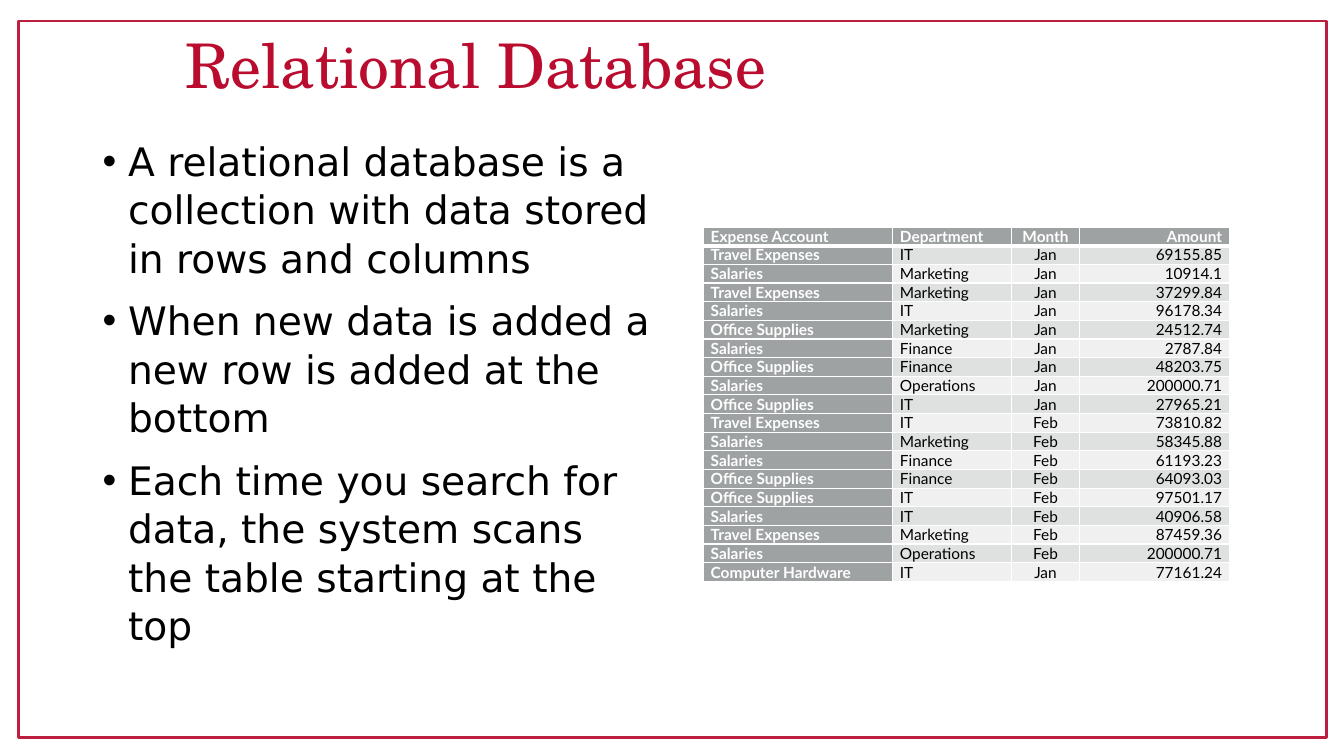
"""Build the Relational Database slide with its bullets and expense table."""
from dataclasses import dataclass

from lxml import etree
from pptx import Presentation
from pptx import util as u
from pptx.dml.color import RGBColor
from pptx.enum import shapes, text
from pptx.oxml.ns import qn

COLORS = {
    "frame": "BC1E3E", "title": "BA0C2F", "ink": "000000", "white": "FFFFFF",
    "header": "9EA2A2", "odd_row": "DFE0E0", "even_row": "F0F0F0",
}


@dataclass(frozen=True)
class TextStyle:
    font: str
    size: int
    color: str
    bold: bool = False


@dataclass(frozen=True)
class Column:
    heading: str
    width: float
    align: text.PP_ALIGN


@dataclass(frozen=True)
class Expense:
    account: str
    department: str
    month: str
    amount: str


TITLE = TextStyle("TeX Gyre Schola", 44, "title")
BODY = TextStyle("DejaVu Sans", 28, "ink")
HEADING = TextStyle("Lato", 11, "white", True)
VALUE = TextStyle("Lato", 11, "ink")

POINTS = [
    "A relational database is a collection with data stored in rows and columns",
    "When new data is added a new row is added at the bottom",
    "Each time you search for data, the system scans the table starting at the top",
]
COLUMNS = [
    Column("Expense Account", 4.77, text.PP_ALIGN.LEFT),
    Column("Department", 3.0, text.PP_ALIGN.LEFT),
    Column("Month", 1.7, text.PP_ALIGN.CENTER),
    Column("Amount", 3.78, text.PP_ALIGN.RIGHT),
]
EXPENSES = [
    Expense("Travel Expenses", "IT", "Jan", "69155.85"),
    Expense("Salaries", "Marketing", "Jan", "10914.1"),
    Expense("Travel Expenses", "Marketing", "Jan", "37299.84"),
    Expense("Salaries", "IT", "Jan", "96178.34"),
    Expense("Office Supplies", "Marketing", "Jan", "24512.74"),
    Expense("Salaries", "Finance", "Jan", "2787.84"),
    Expense("Office Supplies", "Finance", "Jan", "48203.75"),
    Expense("Salaries", "Operations", "Jan", "200000.71"),
    Expense("Office Supplies", "IT", "Jan", "27965.21"),
    Expense("Travel Expenses", "IT", "Feb", "73810.82"),
    Expense("Salaries", "Marketing", "Feb", "58345.88"),
    Expense("Salaries", "Finance", "Feb", "61193.23"),
    Expense("Office Supplies", "Finance", "Feb", "64093.03"),
    Expense("Office Supplies", "IT", "Feb", "97501.17"),
    Expense("Salaries", "IT", "Feb", "40906.58"),
    Expense("Travel Expenses", "Marketing", "Feb", "87459.36"),
    Expense("Salaries", "Operations", "Feb", "200000.71"),
    Expense("Computer Hardware", "IT", "Jan", "77161.24"),
]
ROW_HEIGHT = 0.47


def rgb(name: str) -> RGBColor:
    return RGBColor.from_string(COLORS[name])


def style_runs(paragraph, style: TextStyle) -> None:
    for run in paragraph.runs:
        run.font.name = style.font
        run.font.size = u.Pt(style.size)
        run.font.bold = style.bold
        run.font.color.rgb = rgb(style.color)


def add_frame(slide) -> None:
    frame = slide.shapes.add_shape(
        shapes.MSO_SHAPE.RECTANGLE, u.Cm(0.46), u.Cm(0.53), u.Cm(32.97), u.Cm(18.06))
    frame.shadow.inherit = False
    frame.fill.background()
    frame.line.color.rgb = rgb("frame")
    frame.line.width = u.Pt(2)


def add_title(slide) -> None:
    title = slide.shapes.add_textbox(u.Cm(4.42), u.Cm(0.58), u.Cm(28.7), u.Cm(2.29)).text_frame
    title.word_wrap = True
    title.vertical_anchor = text.MSO_ANCHOR.MIDDLE
    title.text = "Relational Database"
    title.paragraphs[0].line_spacing = 0.9
    style_runs(title.paragraphs[0], TITLE)


def add_points(slide) -> None:
    body = slide.shapes.add_textbox(u.Cm(2.34), u.Cm(3.3), u.Cm(14.33), u.Cm(14.48)).text_frame
    body.word_wrap = True
    body.text = "\n".join(POINTS)
    for index, point in enumerate(body.paragraphs):
        properties = point._p.get_or_add_pPr()
        properties.set("marL", str(u.Cm(0.64)))
        properties.set("indent", str(u.Cm(-0.64)))
        etree.SubElement(properties, qn("a:buFont"), typeface="Arial")
        etree.SubElement(properties, qn("a:buChar"), char="•")
        point.line_spacing = 1.03
        point.space_before = u.Pt(10 if index else 0)
        style_runs(point, BODY)


def add_borders(cell, bottom: int) -> None:
    properties = cell._tc.get_or_add_tcPr()
    widths = {"a:lnL": 1, "a:lnR": 1, "a:lnT": 1, "a:lnB": bottom}
    for position, (side, width) in enumerate(widths.items()):
        border = etree.Element(qn(side), w=str(u.Pt(width)))
        fill = etree.SubElement(border, qn("a:solidFill"))
        etree.SubElement(fill, qn("a:srgbClr"), val=COLORS["white"])
        properties.insert(position, border)


def fill_cell(cell, value: str, align: text.PP_ALIGN, style: TextStyle, fill: str, bottom: int) -> None:
    cell.margin_left = cell.margin_right = u.Cm(0.18)
    cell.margin_top = cell.margin_bottom = 0
    cell.vertical_anchor = text.MSO_ANCHOR.BOTTOM
    cell.text = value
    cell.text_frame.paragraphs[0].alignment = align
    style_runs(cell.text_frame.paragraphs[0], style)
    cell.fill.solid()
    cell.fill.fore_color.rgb = rgb(fill)
    add_borders(cell, bottom)


def add_expenses(slide) -> None:
    headings = Expense(*(column.heading for column in COLUMNS))
    records = [headings, *EXPENSES]
    table = slide.shapes.add_table(
        len(records), len(COLUMNS), u.Cm(17.73), u.Cm(5.72),
        u.Cm(sum(column.width for column in COLUMNS)), u.Cm(ROW_HEIGHT * len(records))).table
    for index, column in enumerate(COLUMNS):
        table.columns[index].width = u.Cm(column.width)
    for row, record in enumerate(records):
        table.rows[row].height = u.Cm(ROW_HEIGHT)
        values = (record.account, record.department, record.month, record.amount)
        for index, (column, value) in enumerate(zip(COLUMNS, values)):
            is_heading = row == 0 or index == 0
            style = HEADING if is_heading else VALUE
            fill = "header" if is_heading else "odd_row" if row % 2 else "even_row"
            fill_cell(table.cell(row, index), value, column.align, style, fill, 1 if row else 3)


def main() -> None:
    deck = Presentation()
    deck.slide_width, deck.slide_height = u.Cm(33.87), u.Cm(19.05)
    slide = deck.slides.add_slide(deck.slide_layouts[6])
    add_frame(slide)
    add_title(slide)
    add_points(slide)
    add_expenses(slide)
    deck.save("out.pptx")


if __name__ == "__main__":
    main()
